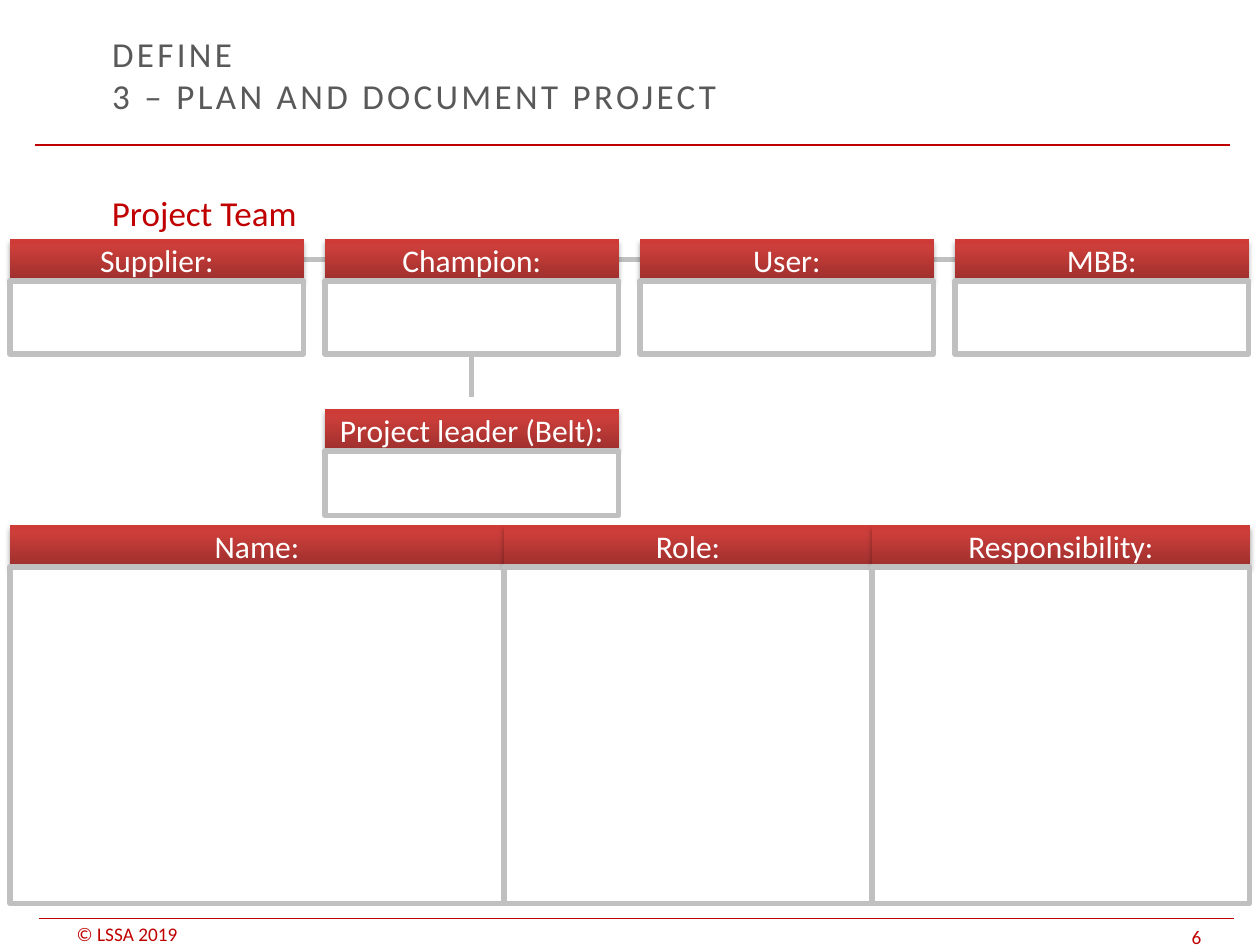
from lxml import etree
from pptx import Presentation
from pptx.dml.color import RGBColor
from pptx.enum.shapes import MSO_CONNECTOR, MSO_SHAPE
from pptx.enum.text import MSO_ANCHOR, PP_ALIGN
from pptx.oxml import parse_xml
from pptx.oxml.ns import nsdecls, qn
from pptx.util import Inches, Pt

LEFT, CENTER = PP_ALIGN.LEFT, PP_ALIGN.CENTER
TOP, MIDDLE, BOTTOM = MSO_ANCHOR.TOP, MSO_ANCHOR.MIDDLE, MSO_ANCHOR.BOTTOM
RECTANGLE = MSO_SHAPE.RECTANGLE
STRAIGHT = MSO_CONNECTOR.STRAIGHT

FONT = "Calibri"
COLORS = {
    "red": "C00000",
    "title": "595959",
    "white": "FFFFFF",
    "gray": "C0C0C0",
}
HEADER_GRADIENT = ((0, "9C2F2D"), (80, "CB3E3A"), (100, "CE3B37"))


def rgb(name):
    return RGBColor.from_string(COLORS[name])


def write_text(shape, text, size=18, color="white", align=LEFT, anchor=TOP,
               spacing=None, vertical_inset=0.05):
    frame = shape.text_frame
    frame.word_wrap = True
    frame.vertical_anchor = anchor
    frame.margin_left = frame.margin_right = Inches(0.1)
    frame.margin_top = frame.margin_bottom = Inches(vertical_inset)
    paragraph = frame.paragraphs[0]
    paragraph.text = text
    paragraph.alignment = align
    for run in paragraph.runs:
        run.font.name = FONT
        run.font.size = Pt(size)
        run.font.color.rgb = rgb(color)
        if spacing:
            run.font._element.set("spc", str(round(spacing * 100)))


class TeamSlide:
    def __init__(self, presentation):
        self.slide = presentation.slides.add_slide(presentation.slide_layouts[5])
        self.shapes = self.slide.shapes

    def title(self, text, left, top, width, height):
        shape = self.shapes.title
        shape.left, shape.top = Inches(left), Inches(top)
        shape.width, shape.height = Inches(width), Inches(height)
        write_text(shape, text, size=20, color="title", anchor=MIDDLE, spacing=1.9)

    def label(self, text, left, top, width, height, **text_format):
        box = self.shapes.add_textbox(
            Inches(left), Inches(top), Inches(width), Inches(height))
        write_text(box, text, color="red", **text_format)

    def line(self, x1, y1, x2, y2, color="gray", weight=3):
        connector = self.shapes.add_connector(
            STRAIGHT, Inches(x1), Inches(y1), Inches(x2), Inches(y2))
        connector.line.color.rgb = rgb(color)
        connector.line.width = Pt(weight)
        etree.SubElement(connector._element.spPr, qn("a:effectLst"))

    def rectangle(self, left, top, width, height):
        shape = self.shapes.add_shape(
            RECTANGLE, Inches(left), Inches(top), Inches(width), Inches(height))
        shape.shadow.inherit = False
        return shape

    def header(self, text, left, top, width, height):
        shape = self.rectangle(left, top, width, height)
        shape.line.fill.background()
        properties = shape._element.spPr
        stops = "".join(
            f'<a:gs pos="{position * 1000}"><a:srgbClr val="{color}"/></a:gs>'
            for position, color in HEADER_GRADIENT)
        gradient = parse_xml(
            f'<a:gradFill {nsdecls("a")} rotWithShape="1"><a:gsLst>{stops}</a:gsLst>'
            '<a:lin ang="16200000" scaled="0"/></a:gradFill>')
        properties.find(qn("a:prstGeom")).addnext(gradient)
        shadow = parse_xml(
            f'<a:outerShdw {nsdecls("a")} blurRad="{Pt(3.1)}" dist="{Pt(1.8)}" '
            'dir="5400000" rotWithShape="0"><a:srgbClr val="000000">'
            '<a:alpha val="35000"/></a:srgbClr></a:outerShdw>')
        properties.find(qn("a:effectLst")).append(shadow)
        write_text(shape, text, align=CENTER, anchor=MIDDLE)

    def entry_box(self, left, top, width, height):
        shape = self.rectangle(left, top, width, height)
        shape.fill.solid()
        shape.fill.fore_color.rgb = rgb("white")
        shape.line.color.rgb = rgb("gray")
        shape.line.width = Pt(3)

    def card(self, text, left, top, width, box_height, header_height=0.33):
        self.header(text, left, top, width, header_height)
        self.entry_box(left, top + header_height, width, box_height)


def main():
    presentation = Presentation()
    presentation.slide_width, presentation.slide_height = Inches(10), Inches(7.5)
    team = TeamSlide(presentation)

    team.label("© LSSA 2019", 0.51, 7.32, 1.42, 0.18,
               size=11, anchor=BOTTOM, vertical_inset=0)
    team.label("6", 9.36, 7.31, 0.64, 0.22,
               size=11, anchor=BOTTOM, vertical_inset=0)
    team.line(0.28, 1.15, 9.76, 1.15, color="red", weight=0.75)
    team.line(0.31, 7.29, 9.79, 7.29, color="red", weight=0.75)
    team.title("DEFINE\v3 – PLAN AND DOCUMENT PROJECT", 0.79, 0.26, 7.09, 0.66)
    team.label("Project Team", 0.79, 1.47, 8.66, 0.43, size=20)

    margin, pitch, card_width = 0.08, 2.5, 2.33
    roles = ("Supplier:", "Champion:", "User:", "MBB:")
    for index in range(1, len(roles)):
        right = margin + index * pitch
        team.line(right - pitch + card_width, 2.06, right, 2.06)
    leader_left = margin + pitch
    leader_center = leader_left + card_width / 2
    team.line(leader_center, 2.81, leader_center, 3.15)
    for index, role in enumerate(roles):
        team.card(role, margin + index * pitch, 1.9, card_width, 0.58)
    team.card("Project leader (Belt):", leader_left, 3.25, card_width, 0.51)

    left = margin
    for heading, width in (("Name:", 3.92), ("Role:", 2.92), ("Responsibility:", 3)):
        team.card(heading, left, 4.17, width, 2.67)
        left += width

    presentation.save("out.pptx")


if __name__ == "__main__":
    main()
